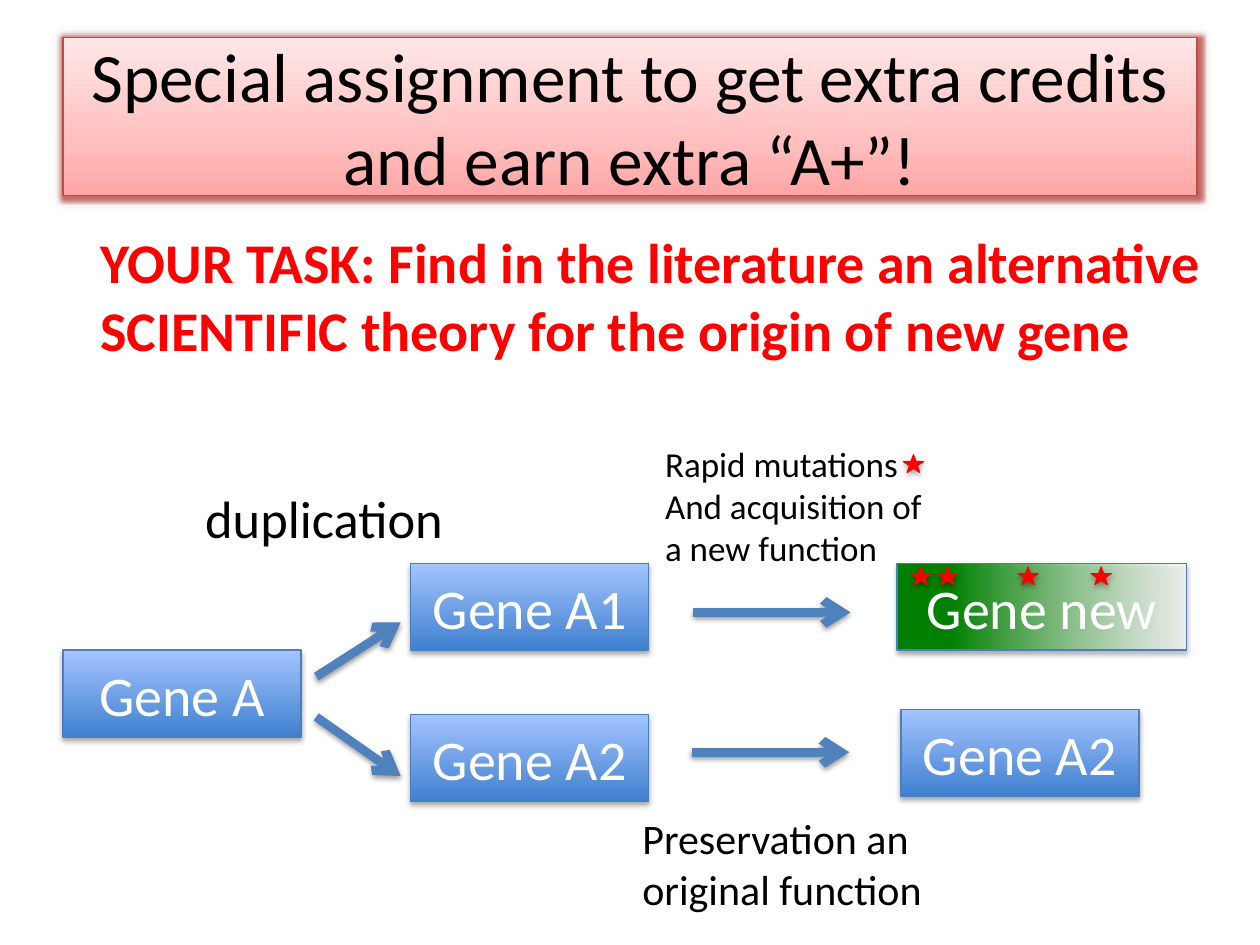
import pptx
import pptx.util
import pptx.dml.color
import pptx.enum.dml
import pptx.enum.shapes
import pptx.enum.text
import pptx.oxml.ns
import lxml.etree

Inches = pptx.util.Inches
Pt = pptx.util.Pt
qn = pptx.oxml.ns.qn
FONT = "Calibri"
COLORS = {
    "text": "000000", "light": "FFFFFF", "red": "FF0000", "arrow": "4F81BD",
    "box_line": "4B7EBC", "box_dark": "3F80CE", "box_light": "A4C4FF",
    "green": "008000", "title_line": "BF4C48", "title_dark": "FFA6A5",
    "title_mid": "FFC0BF", "title_light": "FFE7E7", "shadow": "000000",
}
BOX_STOPS = [(0, "box_dark", 100), (100, "box_light", 100)]
NEW_STOPS = [(18, "green", 100), (100, "light", 71)]
TITLE_STOPS = [(0, "title_dark", 100), (35, "title_mid", 100), (100, "title_light", 100)]


def rgb(name):
    return pptx.dml.color.RGBColor.from_string(COLORS[name])


def add_color(parent, name, alpha):
    clr = lxml.etree.SubElement(parent, qn("a:srgbClr"), val=COLORS[name])
    if alpha < 100:
        lxml.etree.SubElement(clr, qn("a:alpha"), val=str(alpha * 1000))


def set_gradient(sp, stops, angle):
    sp.fill.gradient()
    sp.fill.gradient_angle = angle
    gs_lst = sp._element.spPr.find(qn("a:gradFill")).find(qn("a:gsLst"))
    for gs in list(gs_lst):
        gs_lst.remove(gs)
    for pos, name, alpha in stops:
        gs = lxml.etree.SubElement(gs_lst, qn("a:gs"), pos=str(pos * 1000))
        add_color(gs, name, alpha)


def set_line(sp, name, width):
    sp.line.color.rgb = rgb(name)
    sp.line.width = Pt(width)


def add_shadow(effects, alpha, blur, dist, angle):
    shadow = lxml.etree.SubElement(
        effects, qn("a:outerShdw"), blurRad=str(Pt(blur)), dist=str(Pt(dist)),
        dir=str(angle * 60000), rotWithShape="0")
    add_color(shadow, "shadow", alpha)


def get_effects(sp):
    sp.shadow.inherit = False
    return sp._element.spPr.find(qn("a:effectLst"))


def set_text(tf, text, size, color, align=None, bold=False):
    tf.text = text
    for p in tf.paragraphs:
        p.alignment = align
        for r in p.runs:
            r.font.name = FONT
            r.font.size = Pt(size)
            r.font.bold = bold
            r.font.color.rgb = rgb(color)


def set_title(s, text):
    sp = s.shapes.title
    sp.left, sp.top, sp.width, sp.height = map(Inches, (0.5, 0.3, 9, 1.25))
    set_gradient(sp, TITLE_STOPS, 90)
    set_line(sp, "title_line", 0.75)
    effects = get_effects(sp)
    glow = lxml.etree.SubElement(effects, qn("a:glow"), rad=str(Pt(5)))
    add_color(glow, "title_line", 80)
    add_shadow(effects, 15, 6, 0, 225)
    tf = sp.text_frame
    tf.auto_size = pptx.enum.text.MSO_AUTO_SIZE.NONE
    tf.vertical_anchor = pptx.enum.text.MSO_ANCHOR.MIDDLE
    set_text(tf, text, 39.6, "text", pptx.enum.text.PP_ALIGN.CENTER)


def add_label(s, text, x, y, w, h, size, color="text", bold=False, wrap=False):
    tf = s.shapes.add_textbox(*map(Inches, (x, y, w, h))).text_frame
    tf.word_wrap = wrap
    tf.auto_size = pptx.enum.text.MSO_AUTO_SIZE.SHAPE_TO_FIT_TEXT
    set_text(tf, text, size, color, bold=bold)


def add_gene(s, text, x, y, w=1.89, stops=BOX_STOPS, angle=90):
    sp = s.shapes.add_shape(pptx.enum.shapes.MSO_SHAPE.RECTANGLE,
                            *map(Inches, (x, y, w, 0.69)))
    set_gradient(sp, stops, angle)
    set_line(sp, "box_line", 0.75)
    add_shadow(get_effects(sp), 35, 3.1, 1.8, 90)
    sp.text_frame.vertical_anchor = pptx.enum.text.MSO_ANCHOR.MIDDLE
    set_text(sp.text_frame, text, 32, "light", pptx.enum.text.PP_ALIGN.CENTER)


def add_arrow(s, x1, y1, x2, y2):
    cn = s.shapes.add_connector(pptx.enum.shapes.MSO_CONNECTOR.STRAIGHT,
                                *map(Inches, (x1, y1, x2, y2)))
    set_line(cn, "arrow", 5)
    lxml.etree.SubElement(cn.line._get_or_add_ln(), qn("a:tailEnd"), type="arrow")
    effects = lxml.etree.SubElement(cn._element.spPr, qn("a:effectLst"))
    add_shadow(effects, 38, 3.1, 1.6, 90)


def add_star(s, x, y):
    sp = s.shapes.add_shape(pptx.enum.shapes.MSO_SHAPE.STAR_5_POINT,
                            *map(Inches, (x, y, 0.16, 0.14)))
    sp.fill.solid()
    sp.fill.fore_color.rgb = rgb("red")
    set_line(sp, "red", 0.75)
    add_shadow(get_effects(sp), 35, 3.1, 1.8, 90)


def main():
    prs = pptx.Presentation()
    prs.slide_width, prs.slide_height = Inches(10), Inches(7.5)
    s = prs.slides.add_slide(prs.slide_layouts[5])
    set_title(s, "Special assignment to get extra credits\vand earn extra “A+”!")
    add_label(s, "YOUR TASK: Find in the literature an alternative SCIENTIFIC theory "
              "for the origin of new gene", 0.7, 1.76, 8.97, 1.18, 32, "red", True, True)

    for text, x, y in [("Gene A", 0.5, 5.16), ("Gene A2", 3.26, 5.67),
                       ("Gene A1", 3.26, 4.47), ("Gene A2", 7.15, 5.63)]:
        add_gene(s, text, x, y)
    add_gene(s, "Gene new", 7.12, 4.47, 2.3, NEW_STOPS, 0)

    for ends in [(2.51, 5.69, 3.18, 6.16), (2.51, 5.37, 3.18, 4.94),
                 (5.5, 4.86, 6.75, 4.86), (5.49, 5.97, 6.74, 5.97)]:
        add_arrow(s, *ends)

    add_label(s, "duplication", 1.53, 3.81, 2.11, 0.61, 30)
    add_label(s, "Preservation an\noriginal function", 5, 6.4, 2.44, 0.91, 24)
    add_label(s, "Rapid mutations\nAnd acquisition of\na new function",
              5.18, 3.46, 2.26, 1.11, 20)

    add_star(s, 7.17, 3.61)
    for x in (7.23, 7.44, 8.08, 8.66):
        add_star(s, x, 4.5)
    prs.save("out.pptx")


if __name__ == "__main__":
    main()
